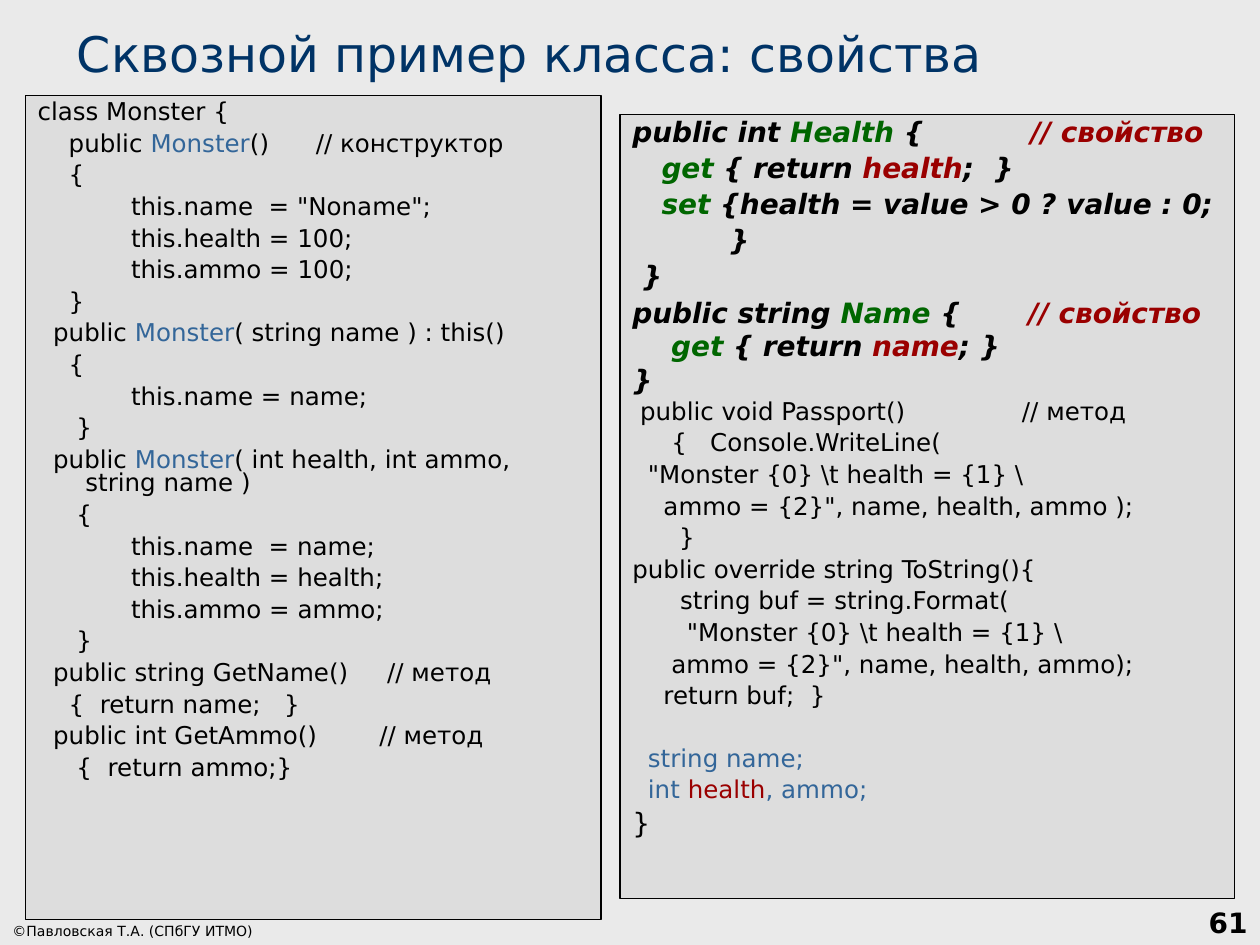
from pptx import Presentation
from pptx.dml.color import RGBColor as Rgb
from pptx.enum.shapes import MSO_SHAPE as Kind
from pptx.enum.text import MSO_ANCHOR as Anchor, MSO_AUTO_SIZE as Fit, PP_ALIGN as Align
from pptx.util import Inches, Pt

INK = {"page": "EAEAEA", "panel": "DDDDDD", "text": "000000", "title": "003366",
       "b": "336699", "g": "006600", "r": "9A0000"}

# Code lines: |kword| sets a word in the colour with key k
LEFT = r'''class Monster {
    public |bMonster|()      // конструктор
    {
            this.name  = "Noname";
            this.health = 100;
            this.ammo = 100;
    }
  public |bMonster|( string name ) : this()
    {
            this.name = name;
     }
  public |bMonster|( int health, int ammo, string name )
     {
            this.name  = name;
            this.health = health;
            this.ammo = ammo;
     }
  public string GetName()     // метод
    {  return name;   }
  public int GetAmmo()        // метод
     {  return ammo;}'''

HEALTH = r'''public int |gHealth| {           |r// свойство|
   |gget| { return |rhealth|;  }
   |gset |{health = value > 0 ? value : 0;
          }
 }'''

NAME = r'''public string |gName| {       |r// свойство|
    |gget |{ return |rname|; }
}'''

METHODS = r''' public void Passport()               // метод
     {   Console.WriteLine(
  "Monster {0} \t health = {1} \
    ammo = {2}", name, health, ammo );
      }
public override string ToString(){
''' + "\tstring buf = string.Format(\n" + r'''       "Monster {0} \t health = {1} \
     ammo = {2}", name, health, ammo);
    return buf;  }'''

FIELDS = '''  |bstring name;|
  |bint ||rhealth||b, ammo;|'''

STRONG = {"bold": True, "italic": True}


class Deck:
    face = "DejaVu Sans"
    hang = Inches(0.38)

    def __init__(self):
        self.prs = Presentation()
        self.prs.slide_width, self.prs.slide_height = Inches(10), Inches(7.5)
        self.slide = self.prs.slides.add_slide(self.prs.slide_layouts[5])
        self.paint(self.slide.background.fill, "page")

    def paint(self, fill, ink):
        fill.solid()
        fill.fore_color.rgb = Rgb.from_string(INK[ink])

    def style(self, font, size, ink="text", **more):
        for key, val in {"name": self.face, "size": Pt(size), **more}.items():
            setattr(font, key, val)
        font.color.rgb = Rgb.from_string(INK[ink])

    def frame(self, shape, anchor):
        form = {"word_wrap": True, "auto_size": Fit.NONE, "vertical_anchor": anchor}
        for key, val in form.items():
            setattr(shape.text_frame, key, val)
        return shape.text_frame

    def label(self, shape, text, size, ink="text", align=Align.LEFT, **more):
        para = self.frame(shape, Anchor.BOTTOM).paragraphs[0]
        para.text, para.alignment = text, align
        self.style(para.runs[0].font, size, ink, **more)

    def title(self, text, *box):
        shape = self.slide.shapes.title
        for key, val in zip(("left", "top", "width", "height"), box):
            setattr(shape, key, Inches(val))
        self.label(shape, text, 28, "title")

    def note(self, text, size, *box, **more):
        shape = self.slide.shapes.add_textbox(*map(Inches, box))
        self.label(shape, text, size, **more)

    def panel(self, *box):
        shape = self.slide.shapes.add_shape(Kind.RECTANGLE, *map(Inches, box))
        shape.shadow.inherit = False
        self.paint(shape.fill, "panel")
        self.paint(shape.line.fill, "text")
        shape.line.width = Pt(0.75)
        return self.frame(shape, Anchor.TOP)

    def code(self, frame, text, size, tight=False, gap=0, **more):
        """Add code lines; tight ones are single spaced, gap goes above the block."""
        for row, line in enumerate(text.split("\n")):
            first = not frame.paragraphs[0].runs
            para = frame.paragraphs[0] if first else frame.add_paragraph()
            lead = 0 if first or tight else 0.22 * size
            form = {"alignment": Align.LEFT, "line_spacing": 1.0 if tight else 0.8,
                    "space_before": Pt(lead + (0 if row else gap)),
                    "space_after": Pt(0 if tight else 0.11 * size)}
            for key, val in form.items():
                setattr(para, key, val)
            props = para._p.get_or_add_pPr()
            props.set("marL", str(self.hang))
            props.set("indent", str(-self.hang))
            for spot, part in enumerate(line.split("|")):
                if part:
                    ink, word = (part[0], part[1:]) if spot % 2 else ("text", part)
                    run = para.add_run()
                    run.text = word
                    self.style(run.font, size, ink, **more)


def main():
    deck = Deck()

    # Footer and title
    deck.note("©Павловская Т.А. (СПбГУ ИТМО)", 8, 0, 7.22, 3.11, 0.28)
    deck.note("61", 16, 7.92, 7, 2.08, 0.5, align=Align.RIGHT, bold=True)
    deck.title("Сквозной пример класса: свойства", 0.51, 0.13, 9.37, 0.57)

    # Left panel: constructors and methods
    deck.code(deck.panel(0.2, 0.76, 4.57, 6.54), LEFT, 14)

    # Right panel: properties, methods, fields
    right = deck.panel(4.92, 0.91, 4.88, 6.22)
    deck.code(right, HEALTH, 16, **STRONG)
    deck.code(right, NAME, 16, tight=True, **STRONG)
    deck.code(right, METHODS, 14)
    deck.code(right, FIELDS, 14, gap=17.6)
    deck.code(right, "}", 16)

    deck.prs.save("out.pptx")


if __name__ == "__main__":
    main()
